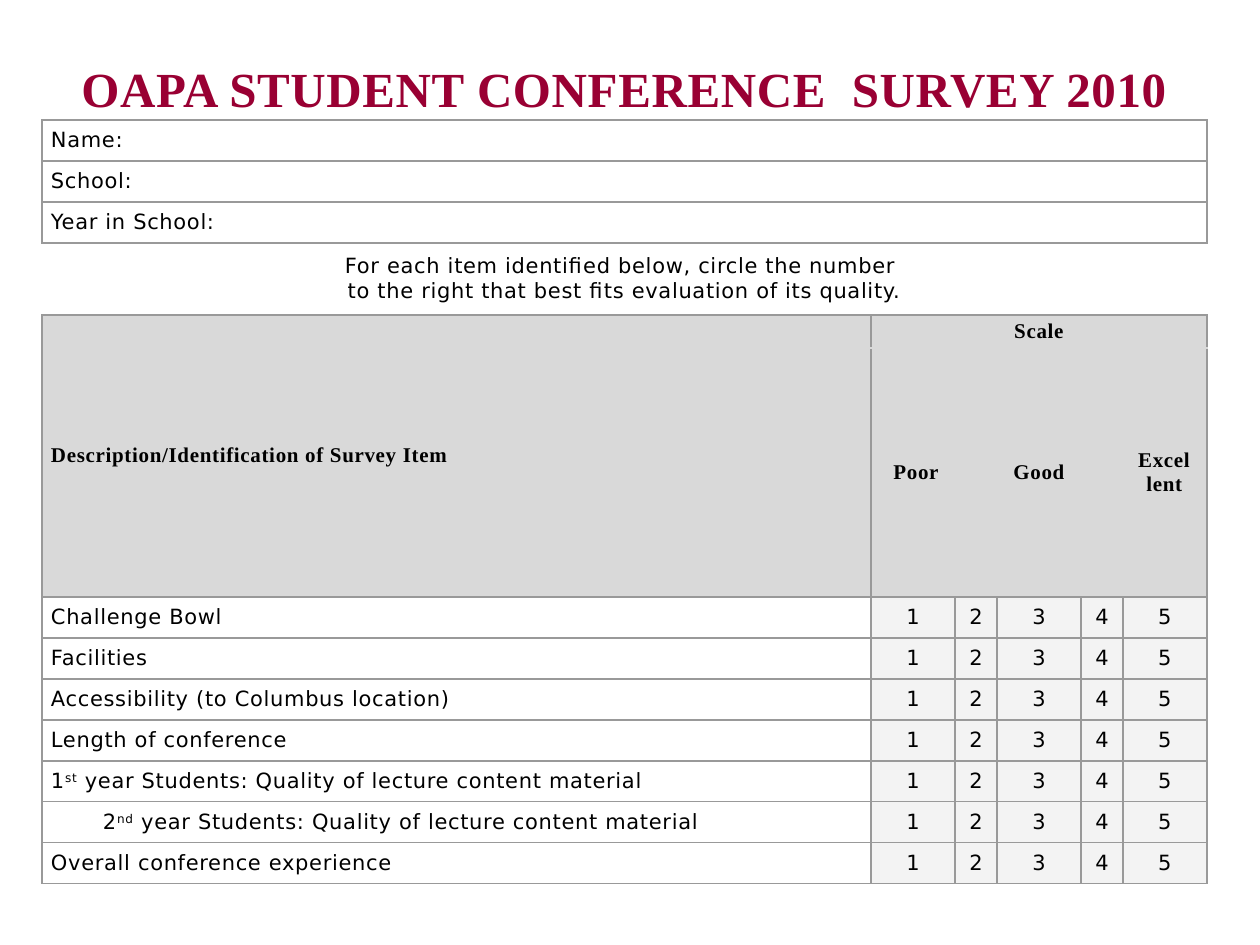
"""Build the student conference survey form as one table on a slide."""
import lxml.etree
import pptx
import pptx.dml.color
import pptx.enum.text
import pptx.oxml.ns
import pptx.util

PX = 914400 // 126
RGB = pptx.dml.color.RGBColor
MAROON = RGB(0x99, 0x00, 0x33)
BLACK = RGB(0x00, 0x00, 0x00)
GRAY = RGB(0x99, 0x99, 0x99)
HEADER = RGB(0xD9, 0xD9, 0xD9)
PALE = RGB(0xF3, 0xF3, 0xF3)
SERIF, SANS = "Times New Roman", "DejaVu Sans"
LEFT, CENTER = pptx.enum.text.PP_ALIGN.LEFT, pptx.enum.text.PP_ALIGN.CENTER
MIDDLE = pptx.enum.text.MSO_ANCHOR.MIDDLE
BOX = (GRAY, GRAY, GRAY, GRAY)
COLUMNS = [829, 84, 42, 84, 42, 84]
ROWS = [78] + [41] * 3 + [72, 33, 249] + [41] * 7


def style_block(row, column, height=1, width=1, fill=None, edges=BOX, sides=(9, 9)):
    """Merge and style a block of cells; edges run left, right, top, bottom."""
    origin = table.cell(row, column)
    if height * width > 1:
        origin.merge(table.cell(row + height - 1, column + width - 1))
    for down in range(height):
        for across in range(width):
            cell = table.cell(row + down, column + across)
            cell.margin_left, cell.margin_right = sides[0] * PX, sides[1] * PX
            cell.margin_top = cell.margin_bottom = 2 * PX
            cell.vertical_anchor = MIDDLE
            if fill is None:
                cell.fill.background()
            else:
                cell.fill.solid()
                cell.fill.fore_color.rgb = fill
            outer = (across == 0, across == width - 1, down == 0, down == height - 1)
            for index, side in enumerate(("L", "R", "T", "B")):
                visible = edges[index] and (outer[index] or down == across == 0)
                line = lxml.etree.Element(pptx.oxml.ns.qn(f"a:ln{side}"), w="12700")
                kind = "a:solidFill" if visible else "a:noFill"
                paint = lxml.etree.SubElement(line, pptx.oxml.ns.qn(kind))
                if visible:
                    color = pptx.oxml.ns.qn("a:srgbClr")
                    lxml.etree.SubElement(paint, color, val=str(edges[index]))
                cell._tc.get_or_add_tcPr().insert(index, line)
    return origin


def write(cell, parts, align=LEFT, font=SANS, size=12, color=BLACK, bold=False):
    """Write runs into a cell; every second part is superscript."""
    para = cell.text_frame.paragraphs[0]
    para.alignment = align
    for index, part in enumerate(parts):
        span = para.add_run()
        span.text = part
        span.font.name, span.font.size = font, pptx.util.Pt(size)
        span.font.bold = bold
        span.font.color.rgb = color
        properties = span._r.get_or_add_rPr()
        properties.set("spc", "40")
        if index % 2:
            properties.set("baseline", "30000")
    return para


deck = pptx.Presentation()
deck.slide_width, deck.slide_height = pptx.util.Inches(10), pptx.util.Inches(7.5)
page = deck.slides.add_slide(deck.slide_layouts[6])
frame = page.shapes.add_table(
    len(ROWS), len(COLUMNS), 42 * PX, 42 * PX, sum(COLUMNS) * PX, sum(ROWS) * PX)
table = frame.table
table.first_row = table.horz_banding = False
for column, width in zip(table.columns, COLUMNS):
    column.width = width * PX
for row, height in zip(table.rows, ROWS):
    row.height = height * PX

title = style_block(0, 0, width=6, edges=(None, None, None, GRAY))
title.vertical_anchor = pptx.enum.text.MSO_ANCHOR.BOTTOM
para = write(title, ["OAPA STUDENT CONFERENCE  SURVEY 2010"], CENTER, SERIF, 28, MAROON, True)
para.space_after = pptx.util.Pt(8)

for row, label in enumerate(["Name:", "School:", "Year in School:"], 1):
    write(style_block(row, 0, width=6), [label])

guide = style_block(4, 0, width=6, edges=(None, None, GRAY, GRAY))
para = write(guide, ["For each item identified below, circle the number "], CENTER)
para.add_line_break()
write(guide, ["to the right that best fits evaluation of its quality."], CENTER)

headings = [
    (5, 0, 2, 1, "Description/Identification of Survey Item", LEFT, BOX, (9, 9)),
    (5, 1, 1, 5, "Scale", CENTER, (GRAY, GRAY, GRAY, HEADER), (9, 9)),
    (6, 1, 1, 1, "Poor", CENTER, (GRAY, HEADER, HEADER, GRAY), (15, 9)),
    (6, 2, 1, 3, "Good", CENTER, (HEADER, HEADER, HEADER, GRAY), (9, 9)),
    (6, 5, 1, 1, "Excellent", CENTER, (HEADER, GRAY, HEADER, GRAY), (14, 15)),
]
for row, column, height, width, label, align, edges, sides in headings:
    cell = style_block(row, column, height, width, HEADER, edges, sides)
    write(cell, [label], align, SERIF, bold=True)

LECTURES = " year Students: Quality of lecture content material"
items = [
    (["Challenge Bowl"], 38, -38),
    (["Facilities"], 38, -38),
    (["Accessibility (to Columbus location)"], 38, -38),
    (["Length of conference"], 38, -38),
    (["1", "st", LECTURES], 38, -38),
    (["2", "nd", LECTURES], 52, 0),
    (["Overall conference experience"], 38, -38),
]
for row, (parts, margin, indent) in enumerate(items, 7):
    para = write(style_block(row, 0), parts)
    properties = para._p.get_or_add_pPr()
    properties.set("marL", str(margin * PX))
    properties.set("indent", str(indent * PX))
    for score in range(1, 6):
        write(style_block(row, score, fill=PALE, sides=(0, 0)), [str(score)], CENTER)

deck.save("out.pptx")
